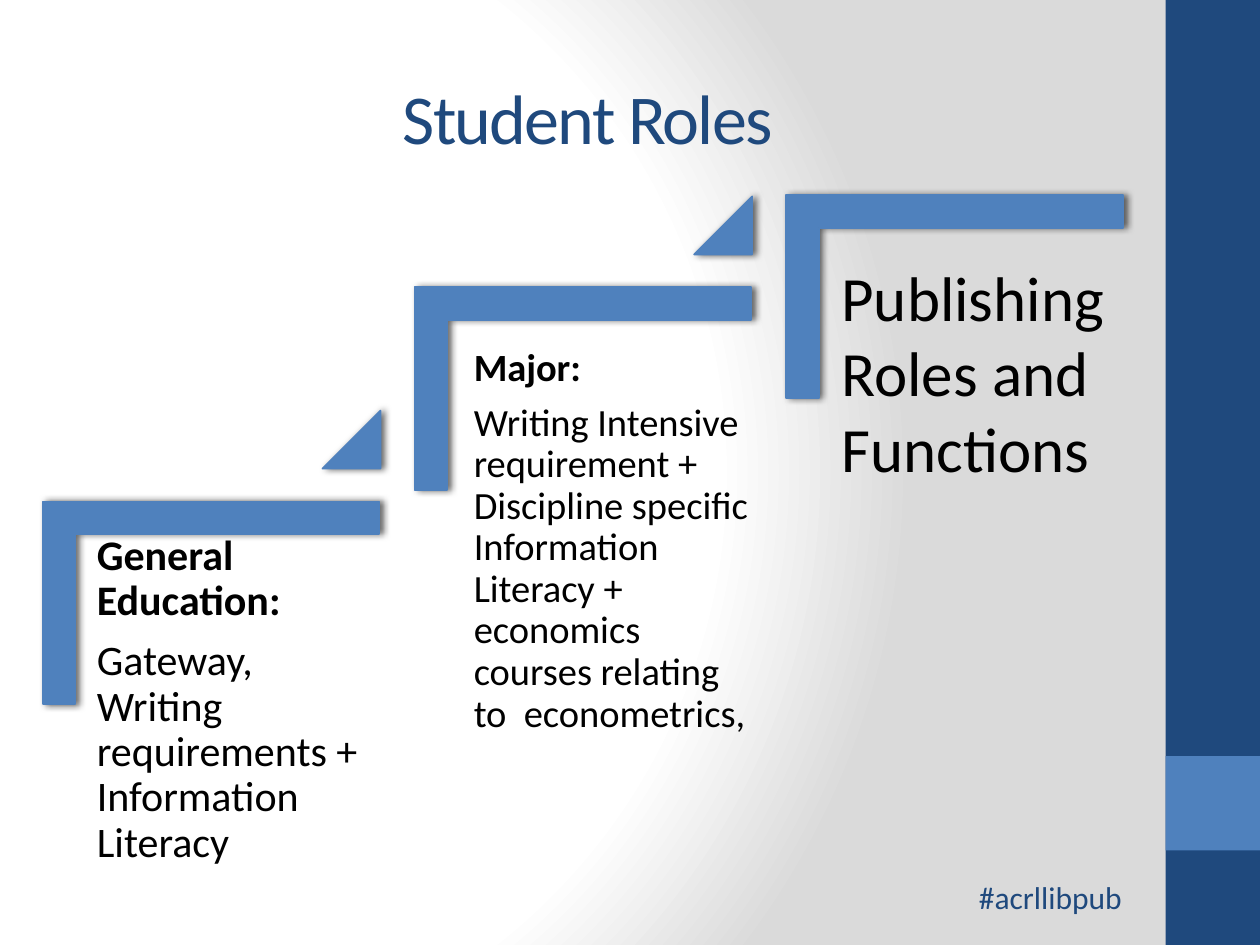
from lxml.etree import SubElement
from pptx import Presentation
from pptx.dml.color import RGBColor
from pptx.enum.shapes import MSO_SHAPE
from pptx.enum.text import MSO_ANCHOR, PP_ALIGN
from pptx.oxml import parse_xml
from pptx.oxml.ns import nsdecls, qn
from pptx.util import Inches, Pt

NAVY, BLUE, BLACK = "1F497D", "4F81BD", "000000"
BAR = 0.75                   # side bar width, also the height of its accent
STEP = 2.95                  # distance between stair columns
CORNER_LEFT, CORNER_WIDTH, CORNER_HEIGHT = 0.87, 1.61, 2.67
CORNER_TOPS = [3.45, 1.75, 1.02]
ARM = 0.16                   # arm thickness as a share of the short side
TRIANGLE = 0.46

deck = Presentation()
deck.slide_width, deck.slide_height = Inches(10), Inches(7.5)
page = deck.slides.add_slide(deck.slide_layouts[6])


def add_block(kind, left, top, width, height, color, shadow=False):
    """Add a filled shape; with shadow it also gets an outline."""
    block = page.shapes.add_shape(
        kind, Inches(left), Inches(top), Inches(width), Inches(height))
    block.shadow.inherit = False
    block.fill.solid()
    block.fill.fore_color.rgb = RGBColor.from_string(color)
    if not shadow:
        block.line.fill.background()
        return block
    block.line.color.rgb = RGBColor.from_string(color)
    block.line.width = Pt(1)
    effects = block._element.spPr.find(qn("a:effectLst"))
    outer = SubElement(effects, qn("a:outerShdw"), blurRad=str(Pt(4)),
                       dist=str(Pt(2)), dir="0", rotWithShape="0")
    tint = SubElement(outer, qn("a:srgbClr"), val=BLACK)
    SubElement(tint, qn("a:alpha"), val="60000")
    return block


def add_text(lines, left, top, width, height, size, color, wrap=True):
    """Add a text box with one paragraph per line and return its frame."""
    box = page.shapes.add_textbox(
        Inches(left), Inches(top), Inches(width), Inches(height))
    frame = box.text_frame
    frame.word_wrap = wrap
    frame.text = "\n".join(lines)
    for para in frame.paragraphs:
        para.font.name = "Calibri"
        para.font.size = Pt(size)
        para.font.color.rgb = RGBColor.from_string(color)
    return frame


# Background: white fading to grey in a circle
page.background.fill.solid()
solid = page.background._cSld.bg.bgPr.find(qn("a:solidFill"))
stops = "".join(
    f'<a:gs pos="{share * 1000}"><a:srgbClr val="{color}"/></a:gs>'
    for share, color in [(0, "FFFFFF"), (75, "FFFFFF"), (100, "DADADA")])
solid.getparent().replace(solid, parse_xml(
    f'<a:gradFill {nsdecls("a")} rotWithShape="1"><a:gsLst>{stops}</a:gsLst>'
    '<a:path path="circle"><a:fillToRect l="20000" t="50000" r="100000" b="50000"/>'
    '</a:path></a:gradFill>'))

# Side bar with accent square
add_block(MSO_SHAPE.RECTANGLE, 10 - BAR, 0, BAR, 7.5, NAVY)
add_block(MSO_SHAPE.RECTANGLE, 10 - BAR, 8 * BAR, BAR, BAR, BLUE)

# Title and hashtag
title = add_text(["Student Roles"], 0.5, 0.3, 8.33, 1.25, 40, NAVY)
title.vertical_anchor = MSO_ANCHOR.MIDDLE
title.paragraphs[0].alignment = PP_ALIGN.CENTER
title.paragraphs[0].runs[0].font._element.set("spc", "-100")
add_text(["#acrllibpub"], 7.67, 6.92, 1.35, 0.4, 18, NAVY, wrap=False)

# Stairs: a corner per step, a triangle leading to the next one
for column, top in enumerate(CORNER_TOPS):
    left = CORNER_LEFT + column * STEP
    corner = add_block(MSO_SHAPE.CORNER, left, top, CORNER_WIDTH, CORNER_HEIGHT,
                       BLUE, shadow=True)
    corner.rotation = 90
    corner.adjustments[0] = corner.adjustments[1] = ARM
    if column < len(CORNER_TOPS) - 1:
        triangle = add_block(MSO_SHAPE.ISOSCELES_TRIANGLE, left + 1.69, top - 0.19,
                             TRIANGLE, TRIANGLE, BLUE, shadow=True)
        triangle.adjustments[0] = 1

# Step texts: bold heading, then details
steps = [
    ("General Education:",
     "Gateway,  Writing requirements + Information Literacy",
     (0.67, 4.14, 2.41, 2.61), 24, 0.1),
    ("Major:",
     "Writing Intensive requirement + Discipline specific Information Literacy + "
     "economics courses relating to  econometrics,",
     (3.67, 2.67, 2.41, 4.05), 22, 0.09),
]
for heading, details, place, size, inset in steps:
    frame = add_text([heading, details], *place, size, BLACK)
    frame.margin_left = frame.margin_right = Inches(inset)
    frame.margin_top = frame.margin_bottom = Inches(inset)
    frame.paragraphs[0].font.bold = True
    for para in frame.paragraphs:
        para.line_spacing = 0.9
        para.space_after = Pt(0.35 * size)
add_text(["Publishing Roles and Functions"], 6.58, 2, 2.33, 1.92, 36, BLACK)

deck.save("out.pptx")
